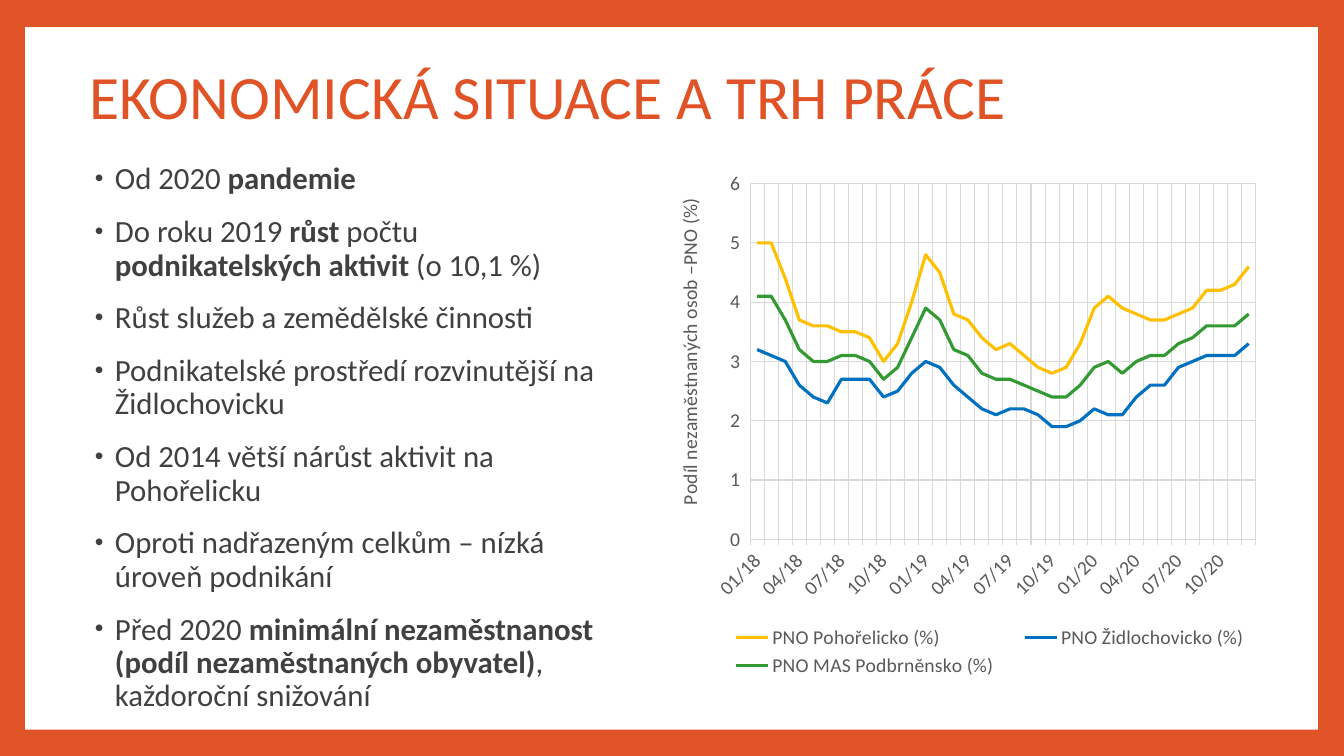
from dataclasses import dataclass

from lxml.etree import SubElement
from pptx import Presentation
from pptx.chart.data import CategoryChartData
from pptx.dml.color import RGBColor
from pptx.enum.chart import XL_CHART_TYPE as ChartType
from pptx.enum.chart import XL_LEGEND_POSITION as LegendPosition
from pptx.enum.chart import XL_MARKER_STYLE as MarkerStyle
from pptx.enum.chart import XL_TICK_MARK as TickMark
from pptx.enum.shapes import MSO_SHAPE as ShapeType
from pptx.enum.text import MSO_ANCHOR as Anchor
from pptx.enum.text import MSO_AUTO_SIZE as AutoSize
from pptx.enum.text import PP_ALIGN as Align
from pptx.oxml import parse_xml
from pptx.oxml.ns import nsdecls, qn
from pptx.util import Inches, Pt


@dataclass(frozen=True)
class Theme:
    font: str = "Calibri"
    accent: str = "DF5327"
    paper: str = "FFFFFF"
    body: str = "404040"
    chart_text: str = "595959"
    grid: str = "D9D9D9"
    title_size: float = 44
    body_size: float = 22
    chart_size: float = 14
    grid_width: float = 0.75
    series_width: float = 2.25


@dataclass(frozen=True)
class Box:
    left: float
    top: float
    width: float
    height: float

    def inches(self) -> tuple:
        return tuple(map(Inches, (self.left, self.top, self.width, self.height)))


@dataclass(frozen=True)
class Run:
    text: str
    bold: bool = False


@dataclass(frozen=True)
class Series:
    name: str
    color: str
    values: tuple


THEME = Theme()

BULLETS = (
    (Run("Od 2020 "), Run("pandemie", True)),
    (Run("Do roku 2019 "), Run("růst", True), Run(" počtu "),
     Run("podnikatelských aktivit ", True), Run("(o 10,1 %)")),
    (Run("Růst služeb a zemědělské činnosti"),),
    (Run("Podnikatelské prostředí rozvinutější na Židlochovicku"),),
    (Run("Od 2014 větší nárůst aktivit na Pohořelicku"),),
    (Run("Oproti nadřazeným celkům – nízká úroveň podnikání"),),
    (Run("Před 2020 "),
     Run("minimální nezaměstnanost (podíl nezaměstnaných obyvatel)", True),
     Run(", každoroční snižování")),
)

MONTHS = [f"{month:02}/{year}" for year in (18, 19, 20) for month in range(1, 13)]

UNEMPLOYMENT = (
    Series("PNO Pohořelicko (%)", "FFC000", (
        5, 5, 4.4, 3.7, 3.6, 3.6, 3.5, 3.5, 3.4, 3, 3.3, 4,
        4.8, 4.5, 3.8, 3.7, 3.4, 3.2, 3.3, 3.1, 2.9, 2.8, 2.9, 3.3,
        3.9, 4.1, 3.9, 3.8, 3.7, 3.7, 3.8, 3.9, 4.2, 4.2, 4.3, 4.6)),
    Series("PNO Židlochovicko (%)", "0070C0", (
        3.2, 3.1, 3, 2.6, 2.4, 2.3, 2.7, 2.7, 2.7, 2.4, 2.5, 2.8,
        3, 2.9, 2.6, 2.4, 2.2, 2.1, 2.2, 2.2, 2.1, 1.9, 1.9, 2,
        2.2, 2.1, 2.1, 2.4, 2.6, 2.6, 2.9, 3, 3.1, 3.1, 3.1, 3.3)),
    Series("PNO MAS Podbrněnsko (%)", "339933", (
        4.1, 4.1, 3.7, 3.2, 3, 3, 3.1, 3.1, 3, 2.7, 2.9, 3.4,
        3.9, 3.7, 3.2, 3.1, 2.8, 2.7, 2.7, 2.6, 2.5, 2.4, 2.4, 2.6,
        2.9, 3, 2.8, 3, 3.1, 3.1, 3.3, 3.4, 3.6, 3.6, 3.6, 3.8)),
)


def style_font(font, size: float, color: str, bold: bool = False) -> None:
    font.name, font.size, font.bold = THEME.font, Pt(size), bold
    font.color.rgb = RGBColor.from_string(color)


def style_line(line, color: str, width: float) -> None:
    line.color.rgb = RGBColor.from_string(color)
    line.width = Pt(width)


def add_panel(slide, box: Box) -> None:
    panel = slide.shapes.add_shape(ShapeType.RECTANGLE, *box.inches())
    panel.shadow.inherit = False
    panel.fill.solid()
    panel.fill.fore_color.rgb = RGBColor.from_string(THEME.paper)
    panel.line.fill.background()
    slide.shapes.title.element.addprevious(panel.element)


def move_placeholder(placeholder, box: Box, anchor: Anchor):
    placeholder.left, placeholder.top, placeholder.width, placeholder.height = box.inches()
    text_frame = placeholder.text_frame
    text_frame.word_wrap = True
    text_frame.auto_size = AutoSize.NONE
    text_frame.vertical_anchor = anchor
    return text_frame


def fill_title(title, box: Box, text: str) -> None:
    text_frame = move_placeholder(title, box, Anchor.MIDDLE)
    text_frame.text = text
    paragraph = text_frame.paragraphs[0]
    paragraph.alignment, paragraph.line_spacing = Align.LEFT, 0.9
    style_font(paragraph.runs[0].font, THEME.title_size, THEME.accent)


def fill_bullets(body, box: Box, bullets: tuple) -> None:
    text_frame = move_placeholder(body, box, Anchor.TOP)
    text_frame.text = "\n".join("" for _ in bullets)
    for paragraph, runs in zip(text_frame.paragraphs, bullets):
        paragraph.line_spacing, paragraph.space_before = 0.9, Pt(14)
        properties = paragraph._p.get_or_add_pPr()
        properties.set("marL", str(Inches(0.25)))
        properties.set("indent", str(Inches(-0.2)))
        SubElement(properties, qn("a:buSzPct"), val="80000")
        SubElement(properties, qn("a:buFont"), typeface="Arial")
        SubElement(properties, qn("a:buChar"), char="•")
        for item in runs:
            run = paragraph.add_run()
            run.text = item.text
            style_font(run.font, THEME.body_size, THEME.body, item.bold)


def set_layout(parent, index: int, target: str = "", **fractions: float) -> None:
    """Place a chart part by fractions of the chart's size."""
    for layout in parent.findall(qn("c:layout")):
        parent.remove(layout)
    layout = parse_xml(f"<c:layout {nsdecls('c')}><c:manualLayout/></c:layout>")
    if target:
        SubElement(layout[0], qn("c:layoutTarget"), val=target)
    for name in ("x", "y"):
        SubElement(layout[0], qn(f"c:{name}Mode"), val="edge")
    for name, value in fractions.items():
        SubElement(layout[0], qn(f"c:{name}"), val=str(value))
    parent.insert(index, layout)


def add_unemployment_chart(slide, box: Box) -> None:
    data = CategoryChartData()
    data.categories = MONTHS
    for series in UNEMPLOYMENT:
        data.add_series(series.name, series.values)
    chart = slide.shapes.add_chart(ChartType.LINE, *box.inches(), data).chart
    chart.has_title = False
    style_font(chart.font, THEME.chart_size, THEME.chart_text)

    # Series
    chart.plots[0].vary_by_categories = False
    for line, series in zip(chart.plots[0].series, UNEMPLOYMENT):
        line.smooth = False
        line.marker.style = MarkerStyle.NONE
        style_line(line.format.line, series.color, THEME.series_width)

    # Axes
    for axis in (chart.category_axis, chart.value_axis):
        axis.has_major_gridlines = True
        axis.major_tick_mark = TickMark.OUTSIDE
        style_line(axis.major_gridlines.format.line, THEME.grid, THEME.grid_width)
        style_font(axis.tick_labels.font, THEME.chart_size, THEME.chart_text)
    style_line(chart.category_axis.format.line, THEME.grid, THEME.grid_width)
    value_axis = chart.value_axis
    value_axis.format.line.fill.background()
    value_axis.minimum_scale, value_axis.maximum_scale, value_axis.major_unit = 0, 6, 1
    title_frame = value_axis.axis_title.text_frame
    title_frame.text = "Podíl nezaměstnaných osob –PNO (%)"
    style_font(title_frame.paragraphs[0].runs[0].font, THEME.chart_size, THEME.chart_text)

    # Legend
    chart.has_legend = True
    chart.legend.position = LegendPosition.BOTTOM
    chart.legend.include_in_layout = False
    style_font(chart.legend.font, THEME.chart_size, THEME.chart_text)

    # Rotation and placement
    plot_area = chart.element.find(".//" + qn("c:plotArea"))
    axis_title = plot_area.find(f"{qn('c:valAx')}/{qn('c:title')}")
    labels = plot_area.find(f"{qn('c:catAx')}/{qn('c:txPr')}")
    for part, degrees in ((labels, -45), (axis_title, -90)):
        text_body = part.find(".//" + qn("a:bodyPr"))
        text_body.set("rot", str(degrees * 60000))
        text_body.set("vert", "horz")
    set_layout(plot_area, 0, "inner", x=0.14, y=0.05, w=0.78, h=0.65)
    set_layout(axis_title, 1, x=0.02, y=0.07)
    set_layout(chart.element.find(".//" + qn("c:legend")), 1, x=0.08, y=0.85, w=0.86, h=0.11)


def main() -> None:
    presentation = Presentation()
    presentation.slide_width, presentation.slide_height = Inches(13.33), Inches(7.5)
    slide = presentation.slides.add_slide(presentation.slide_layouts[1])

    # Frame
    slide.background.fill.solid()
    slide.background.fill.fore_color.rgb = RGBColor.from_string(THEME.accent)
    add_panel(slide, Box(0.25, 0.27, 12.82, 6.97))

    # Content
    fill_title(slide.shapes.title, Box(0.79, 0.26, 11.5, 1.45), "EKONOMICKÁ SITUACE A TRH PRÁCE")
    fill_bullets(slide.placeholders[1], Box(0.79, 1.57, 5.46, 5.57), BULLETS)
    add_unemployment_chart(slide, Box(6.54, 1.55, 6.43, 5.43))
    presentation.save("out.pptx")


if __name__ == "__main__":
    main()
